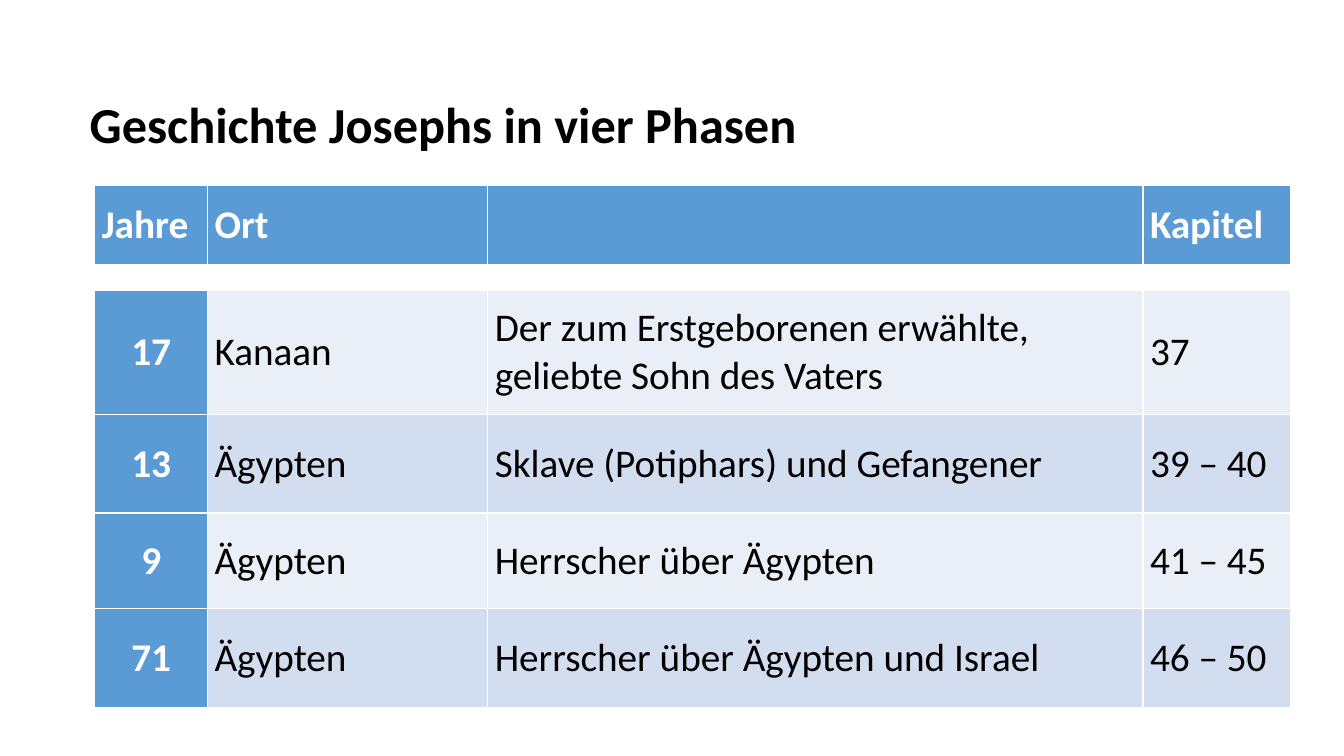
from lxml import etree
from pptx import Presentation
from pptx import util as u
from pptx.dml import color
from pptx.enum import text
from pptx.oxml import ns

FONT = "Calibri"
BLACK, WHITE, BLUE = "000000", "FFFFFF", "5B9BD5"
BANDS = ["EAEFF7", "D2DEEF"]

COLUMN_WIDTHS = [80.64, 200.16, 468, 105.12]
ROW_HEIGHTS = [56.16, 18.72, 88.56, 70.56, 68.4, 70.56]
HEADER_ROW, GAP_ROW = 0, 1
PHASES = [
    ["Jahre", "Ort", "", "Kapitel"],
    ["", "", "", ""],
    ["17", "Kanaan", "Der zum Erstgeborenen erwählte, geliebte Sohn des Vaters", "37"],
    ["13", "Ägypten", "Sklave (Potiphars) und Gefangener", "39 – 40"],
    ["9", "Ägypten", "Herrscher über Ägypten", "41 – 45"],
    ["71", "Ägypten", "Herrscher über Ägypten und Israel", "46 – 50"],
]


def rgb(value):
    return color.RGBColor.from_string(value)


def set_attributes(target, values):
    for name, value in values.items():
        setattr(target, name, value)


def format_font(font, size, colour, bold):
    set_attributes(font, {"name": FONT, "size": u.Pt(size), "bold": bold})
    font.color.rgb = rgb(colour)


def add_title(slide, left, top, width, height):
    title = slide.shapes.title
    set_attributes(title, {"left": u.Pt(left), "top": u.Pt(top),
                           "width": u.Pt(width), "height": u.Pt(height)})
    set_attributes(title.text_frame, {
        "text": "Geschichte Josephs in vier Phasen",
        "word_wrap": False,
        "auto_size": text.MSO_AUTO_SIZE.SHAPE_TO_FIT_TEXT,
        "vertical_anchor": text.MSO_ANCHOR.TOP,
    })
    paragraph = title.text_frame.paragraphs[0]
    paragraph.alignment = text.PP_ALIGN.LEFT
    format_font(paragraph.runs[0].font, 36, BLACK, True)


def set_borders(cell, colour, width):
    properties = cell._tc.get_or_add_tcPr()
    for position, side in enumerate(["lnL", "lnR", "lnT", "lnB"]):
        line = etree.Element(ns.qn(f"a:{side}"), w=str(u.Pt(width)))
        fill = etree.SubElement(line, ns.qn("a:solidFill"))
        etree.SubElement(fill, ns.qn("a:srgbClr"), val=colour)
        properties.insert(position, line)


def format_cell(cell, wording, row, column):
    is_heading = row == HEADER_ROW or column == 0
    if row == GAP_ROW:
        fill = WHITE
    elif is_heading:
        fill = BLUE
    else:
        fill = BANDS[row % 2]
    cell.fill.solid()
    cell.fill.fore_color.rgb = rgb(fill)
    set_borders(cell, WHITE, 1)
    set_attributes(cell, {
        "margin_left": u.Pt(5), "margin_right": u.Pt(5),
        "margin_top": 0, "margin_bottom": 0,
        "vertical_anchor": text.MSO_ANCHOR.MIDDLE,
    })

    paragraph = cell.text_frame.paragraphs[0]
    if not wording:
        # A small font keeps the empty row low
        etree.SubElement(paragraph._p, ns.qn("a:endParaRPr"), sz="800")
        return
    centred = column == 0 and row > GAP_ROW
    paragraph.alignment = text.PP_ALIGN.CENTER if centred else text.PP_ALIGN.LEFT
    run = paragraph.add_run()
    run.text = wording
    format_font(run.font, 28, WHITE if is_heading else BLACK, is_heading)


def add_phase_table(slide, left, top):
    frame = slide.shapes.add_table(
        len(PHASES), len(COLUMN_WIDTHS), u.Pt(left), u.Pt(top),
        u.Pt(sum(COLUMN_WIDTHS)), u.Pt(sum(ROW_HEIGHTS)))
    table = frame.table
    table.horz_banding = False
    for column, width in zip(table.columns, COLUMN_WIDTHS):
        column.width = u.Pt(width)
    for row, height in zip(table.rows, ROW_HEIGHTS):
        row.height = u.Pt(height)
    for row, wordings in enumerate(PHASES):
        for column, wording in enumerate(wordings):
            format_cell(table.cell(row, column), wording, row, column)


def main():
    presentation = Presentation()
    presentation.slide_width = u.Pt(960)
    presentation.slide_height = u.Pt(540)
    slide = presentation.slides.add_slide(presentation.slide_layouts[5])

    # Title
    add_title(slide, 56.88, 62.64, 524.88, 51.12)
    # Table of the four phases
    add_phase_table(slide, 67.68, 132.48)

    presentation.save("out.pptx")


if __name__ == "__main__":
    main()
